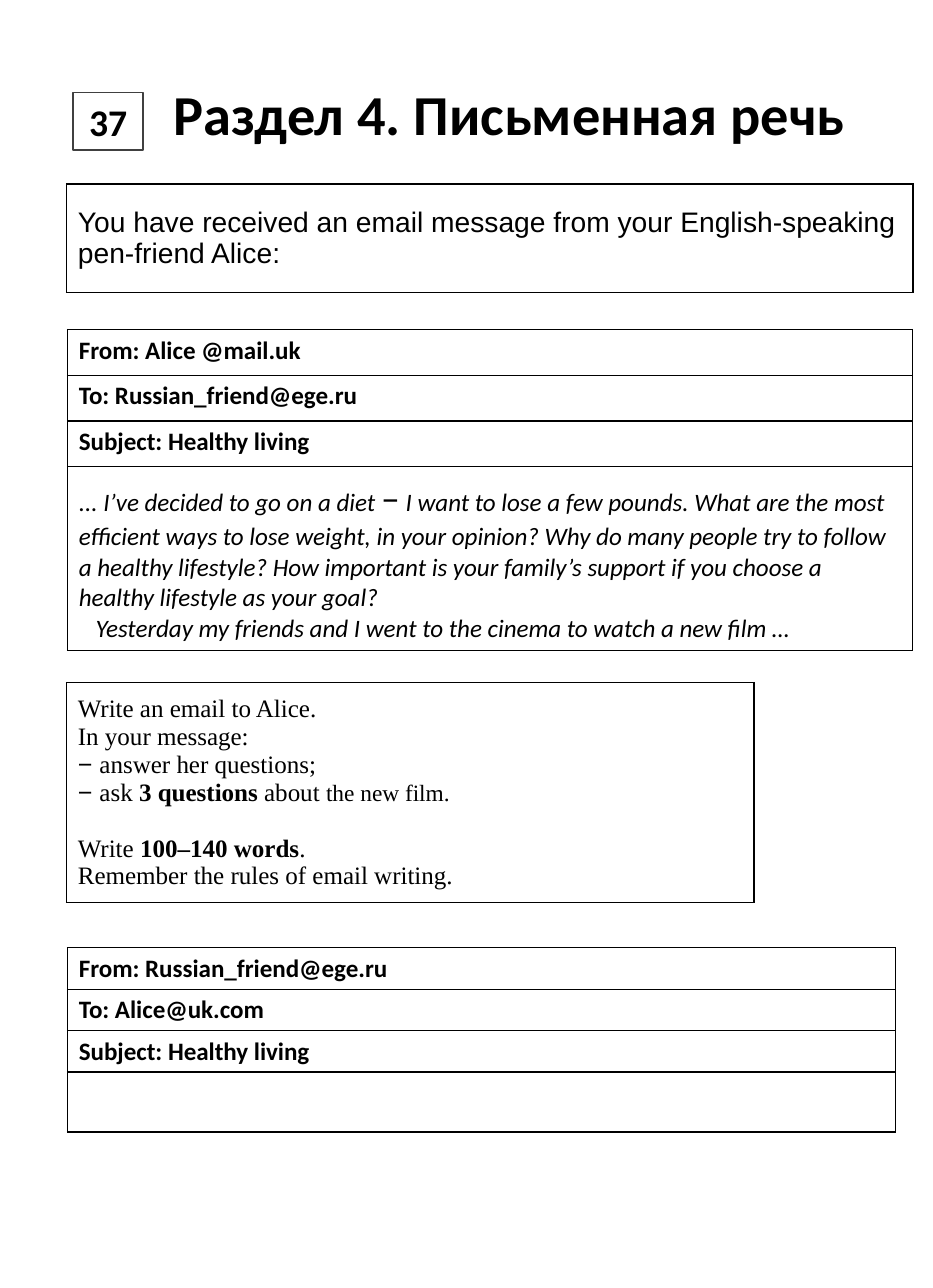
"""Build the exam page with an email task and a reply form."""
from lxml import etree
from pptx import Presentation
from pptx.dml.color import RGBColor
from pptx.enum.shapes import MSO_SHAPE
from pptx.enum.text import MSO_ANCHOR, MSO_AUTO_SIZE, PP_ALIGN
from pptx.oxml.ns import qn
from pptx.util import Cm, Pt

MIDDLE, TOP = MSO_ANCHOR.MIDDLE, MSO_ANCHOR.TOP
CENTER, LEFT = PP_ALIGN.CENTER, PP_ALIGN.LEFT
RECT, FIT = MSO_SHAPE.RECTANGLE, MSO_AUTO_SIZE.SHAPE_TO_FIT_TEXT
COLORS = {"ink": "000000", "paper": "FFFFFF", "frame": "404040"}

NUMBER = "37"
TITLE = "Раздел 4. Письменная речь"
INTRO = "You have received an email message from your English-speaking pen-friend Alice:"
LETTER_HEAD = ["From: Alice @mail.uk", "To: Russian_friend@ege.ru", "Subject: Healthy living"]
REPLY_HEAD = ["From: Russian_friend@ege.ru", "To: Alice@uk.com", "Subject: Healthy living"]
LETTER = [
    [("... I’ve decided to go on a diet ", {}),
     ("–", {"size": 24, "italic": False}),
     (" I want to lose a few pounds. What are the most efficient ways to lose weight, "
      "in your opinion? Why do many people try to follow a healthy lifestyle? "
      "How important is your family’s support if you choose a healthy lifestyle "
      "as your goal?", {})],
    "Yesterday my friends and I went to the cinema to watch a new film …",
]
DASH = ("− ", {"font": "Arial"})
TASK = [
    "Write an email to Alice.",
    "In your message:",
    [DASH, ("answer her questions;", {})],
    [DASH, ("ask ", {}), ("3 questions ", {"bold": True}), ("about ", {}),
     ("the new film.", {"size": 14.9})],
]
LIMIT = [
    [("Write ", {}), ("100–140 words", {"bold": True}), (".", {})],
    "Remember the rules of email writing.",
]

HEAD = {"size": 16, "bold": True}
BODY = {"size": 16, "italic": True}
SERIF = {"size": 16, "font": "Times New Roman"}


def write(frame, lines, font="Calibri", size=16, bold=False, italic=False, align=LEFT):
    """Fill a text frame with lines made of plain or mixed runs."""
    for num, line in enumerate(lines):
        para = frame.add_paragraph() if num else frame.paragraphs[0]
        para.alignment = align
        base = {"font": font, "size": size, "bold": bold, "italic": italic}
        for text, extra in [(line, {})] if isinstance(line, str) else line:
            look = {**base, **extra}
            run = para.add_run()
            run.text = text
            run.font.name = look["font"]
            run.font.size = Pt(look["size"])
            run.font.bold = look["bold"]
            run.font.italic = look["italic"]
            run.font.color.rgb = RGBColor.from_string(COLORS["ink"])


def border(cell):
    """Draw a thin line on all four sides of a cell."""
    props = cell._tc.get_or_add_tcPr()
    for num, side in enumerate(("a:lnL", "a:lnR", "a:lnT", "a:lnB")):
        line = etree.Element(qn(side), w=str(Pt(1)))
        fill = etree.SubElement(line, qn("a:solidFill"))
        etree.SubElement(fill, qn("a:srgbClr"), val=COLORS["ink"])
        props.insert(num, line)


def add_grid(slide, left, top, width, rows):
    """Add a one-column table from rows of height, lines, anchor and format."""
    total = sum(row[0] for row in rows)
    table = slide.shapes.add_table(
        len(rows), 1, Cm(left), Cm(top), Cm(width), Cm(total)).table
    table.first_row = table.horz_banding = False
    for num, (height, lines, anchor, look) in enumerate(rows):
        table.rows[num].height = Cm(height)
        cell = table.cell(num, 0)
        cell.fill.background()
        border(cell)
        cell.vertical_anchor = anchor
        write(cell.text_frame, lines, **look)
    return table


def main():
    """Lay out the page and save it."""
    deck = Presentation()
    deck.slide_width, deck.slide_height = Cm(21), Cm(29)
    slide = deck.slides.add_slide(deck.slide_layouts[6])

    badge = slide.shapes.add_shape(RECT, Cm(1.65), Cm(2.08), Cm(1.57), Cm(1.3))
    badge.shadow.inherit = False
    badge.fill.solid()
    badge.fill.fore_color.rgb = RGBColor.from_string(COLORS["paper"])
    badge.line.color.rgb = RGBColor.from_string(COLORS["frame"])
    badge.line.width = Pt(1)
    badge.text_frame.vertical_anchor = MIDDLE
    write(badge.text_frame, [NUMBER], size=24, bold=True, align=CENTER)

    title = slide.shapes.add_textbox(Cm(3.58), Cm(1.65), Cm(15.77), Cm(1.8)).text_frame
    title.word_wrap = False
    title.auto_size = FIT
    write(title, [TITLE], size=36, bold=True, align=CENTER)

    add_grid(slide, 1.5, 4.14, 19.05,
             [(2.44, [INTRO], MIDDLE, {"size": 18, "font": "Arial"})])

    heads = [(1.03, [line], TOP, HEAD) for line in LETTER_HEAD]
    mail = add_grid(slide, 1.52, 7.42, 19.02, heads + [(4.14, LETTER, MIDDLE, BODY)])
    cell = mail.cell(len(heads), 0)
    cell.margin_top = cell.margin_bottom = Cm(0.2)
    last = cell.text_frame.paragraphs[-1]
    last._p.get_or_add_pPr().set("indent", str(Cm(0.38)))

    task = add_grid(slide, 1.5, 15.37, 15.47, [(4.95, TASK + LIMIT, MIDDLE, SERIF)])
    task.cell(0, 0).text_frame.paragraphs[len(TASK)].space_before = Pt(18)

    heads = [(0.93, [line], TOP, HEAD) for line in REPLY_HEAD]
    add_grid(slide, 1.52, 21.34, 18.64, heads + [(1.35, [], TOP, {})])

    deck.save("out.pptx")


if __name__ == "__main__":
    main()
